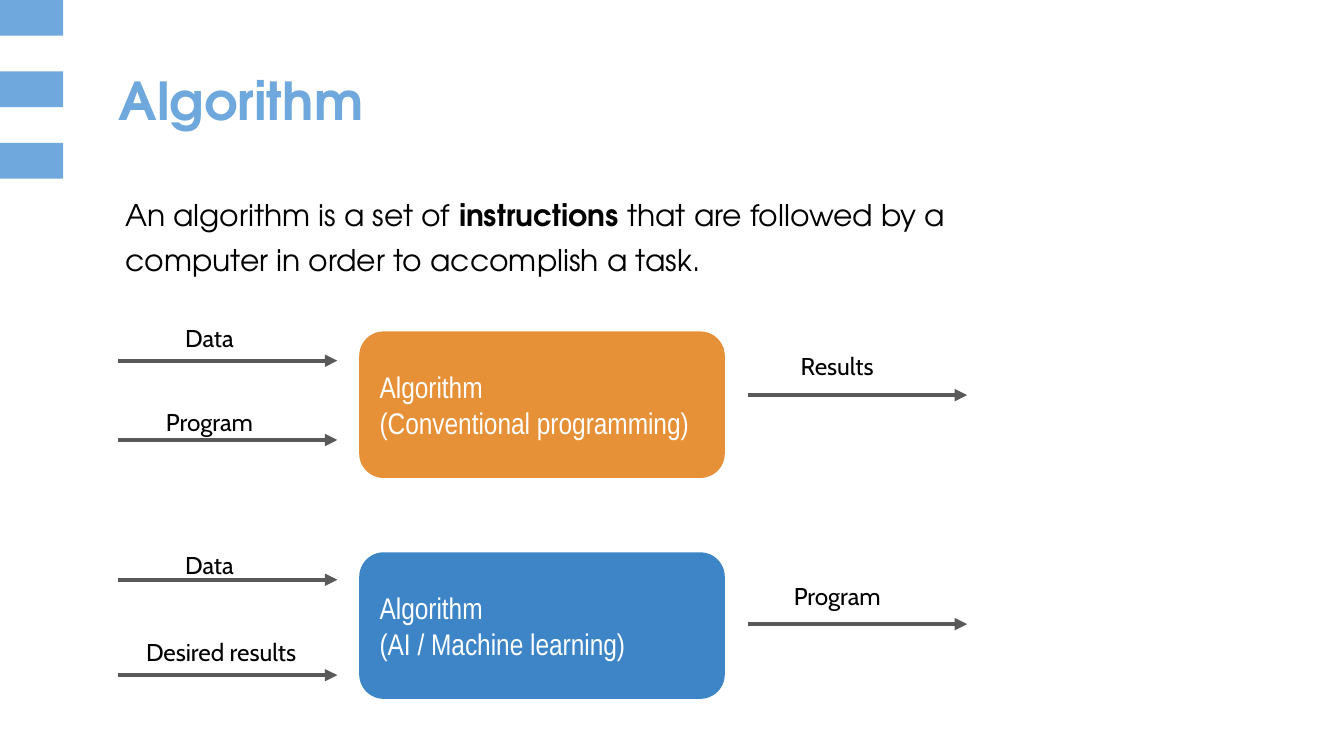
import pptx
import pptx.util
import pptx.dml.color
import pptx.enum.shapes
import pptx.enum.text
import pptx.oxml.ns
from lxml import etree

COLORS = {
    "sky": "6FA8DC",
    "orange": "E69138",
    "blue": "3D85C6",
    "gray": "595959",
    "black": "000000",
    "white": "FFFFFF",
}
HEADING_FONT, BOX_FONT, LABEL_FONT = "TeX Gyre Adventor", "Arial Narrow", "Cabin"
WIDTH = 10
HEIGHT = WIDTH * 9 / 16
COLUMNS = 100  # square grid cells, so rows are as tall as columns are wide

Shapes = pptx.enum.shapes.MSO_SHAPE
Anchor = pptx.enum.text.MSO_ANCHOR
Align = pptx.enum.text.PP_ALIGN
AutoSize = pptx.enum.text.MSO_AUTO_SIZE


def grid(*cells):
    return [pptx.util.Inches(cell * WIDTH / COLUMNS) for cell in cells]


def color(name):
    return pptx.dml.color.RGBColor.from_string(COLORS[name])


class SlideBuilder:
    def __init__(self, page):
        self.page = page

    def style_font(self, font, name, size, ink, bold=None):
        font.name, font.size, font.bold = name, pptx.util.Pt(size), bold
        font.color.rgb = color(ink)

    def prepare_frame(self, frame, anchor):
        frame.word_wrap = True
        frame.vertical_anchor = anchor
        margin = pptx.util.Inches(0.1)
        frame.margin_left = frame.margin_right = margin
        frame.margin_top = frame.margin_bottom = margin
        return frame.paragraphs[0]

    def block(self, kind, left, top, width, height, fill):
        shape = self.page.shapes.add_shape(kind, *grid(left, top, width, height))
        shape.shadow.inherit = False
        shape.fill.solid()
        shape.fill.fore_color.rgb = color(fill)
        shape.line.fill.background()
        return shape

    def process(self, left, top, width, height, fill, text):
        shape = self.block(Shapes.ROUNDED_RECTANGLE, left, top, width, height, fill)
        para = self.prepare_frame(shape.text_frame, Anchor.MIDDLE)
        para.text = text
        para.alignment = Align.LEFT
        self.style_font(para.font, BOX_FONT, 16, "white")

    def text(self, left, top, width, height, anchor=Anchor.TOP, grow=True):
        box = self.page.shapes.add_textbox(*grid(left, top, width, height))
        para = self.prepare_frame(box.text_frame, anchor)
        box.text_frame.auto_size = AutoSize.SHAPE_TO_FIT_TEXT if grow else AutoSize.NONE
        return para

    def title(self, left, top, width, height, text):
        para = self.text(left, top, width, height, Anchor.MIDDLE, grow=False)
        para.text = text
        self.style_font(para.font, HEADING_FONT, 28, "sky", True)

    def body(self, left, top, width, height, parts):
        para = self.text(left, top, width, height)
        para.line_spacing = 1.25
        for words, bold in parts:
            span = para.add_run()
            span.text = words
            self.style_font(span.font, HEADING_FONT, 16, "black", bold)

    def label(self, center, top, width, text):
        para = self.text(center - width / 2, top, width, 4.2)
        para.text = text
        para.alignment = Align.CENTER
        self.style_font(para.font, LABEL_FONT, 13, "black")

    def arrow(self, left, row, length):
        line = self.page.shapes.add_connector(
            pptx.enum.shapes.MSO_CONNECTOR.STRAIGHT,
            *grid(left, row, left + length, row))
        line.line.color.rgb = color("gray")
        line.line.width = pptx.util.Pt(2.25)
        qn = pptx.oxml.ns.qn
        etree.SubElement(line.line._get_or_add_ln(), qn("a:tailEnd"), type="triangle")
        etree.SubElement(line._element.spPr, qn("a:effectLst"))


def main():
    deck = pptx.Presentation()
    deck.slide_width = pptx.util.Inches(WIDTH)
    deck.slide_height = pptx.util.Inches(HEIGHT)
    slide = SlideBuilder(deck.slides.add_slide(deck.slide_layouts[6]))

    # Stripes in the corner
    stripe = 2.66
    for index in range(3):
        slide.block(Shapes.RECTANGLE, 0, 2 * index * stripe, 4.7, stripe, "sky")

    # Heading and definition
    slide.title(7.84, 5.9, 84.4, 3, "Algorithm")
    slide.body(8.34, 13, 68.7, 8.1, [
        ("An algorithm is a set of ", False),
        ("instructions", True),
        (" that are followed by a computer in order to accomplish a task.", False),
    ])

    # Algorithm boxes
    for top, fill, kind in [(24.66, "orange", "(Conventional programming)"),
                            (41.1, "blue", "(AI / Machine learning)")]:
        slide.process(26.73, top, 27.2, 10.9, fill, "Algorithm\n" + kind)

    # Inputs on the left and outputs on the right, each a labelled arrow
    input_left, output_left, length = 8.8, 55.66, 16.3
    flows = [
        # arrow left, arrow row, label center, label top, label width, label
        (input_left, 26.84, 15.58, 23.06, 10.1, "Data"),
        (input_left, 32.74, 15.58, 29.3, 10.1, "Program"),
        (input_left, 43.14, 15.58, 39.96, 10.1, "Data"),
        (input_left, 50.24, 16.45, 46.4, 17.3, "Desired results"),
        (output_left, 29.4, 62.29, 25.14, 10.1, "Results"),
        (output_left, 46.44, 62.29, 42.24, 10.1, "Program"),
    ]
    for left, row, center, top, width, text in flows:
        slide.arrow(left, row, length)
        slide.label(center, top, width, text)

    deck.save("out.pptx")


if __name__ == "__main__":
    main()
